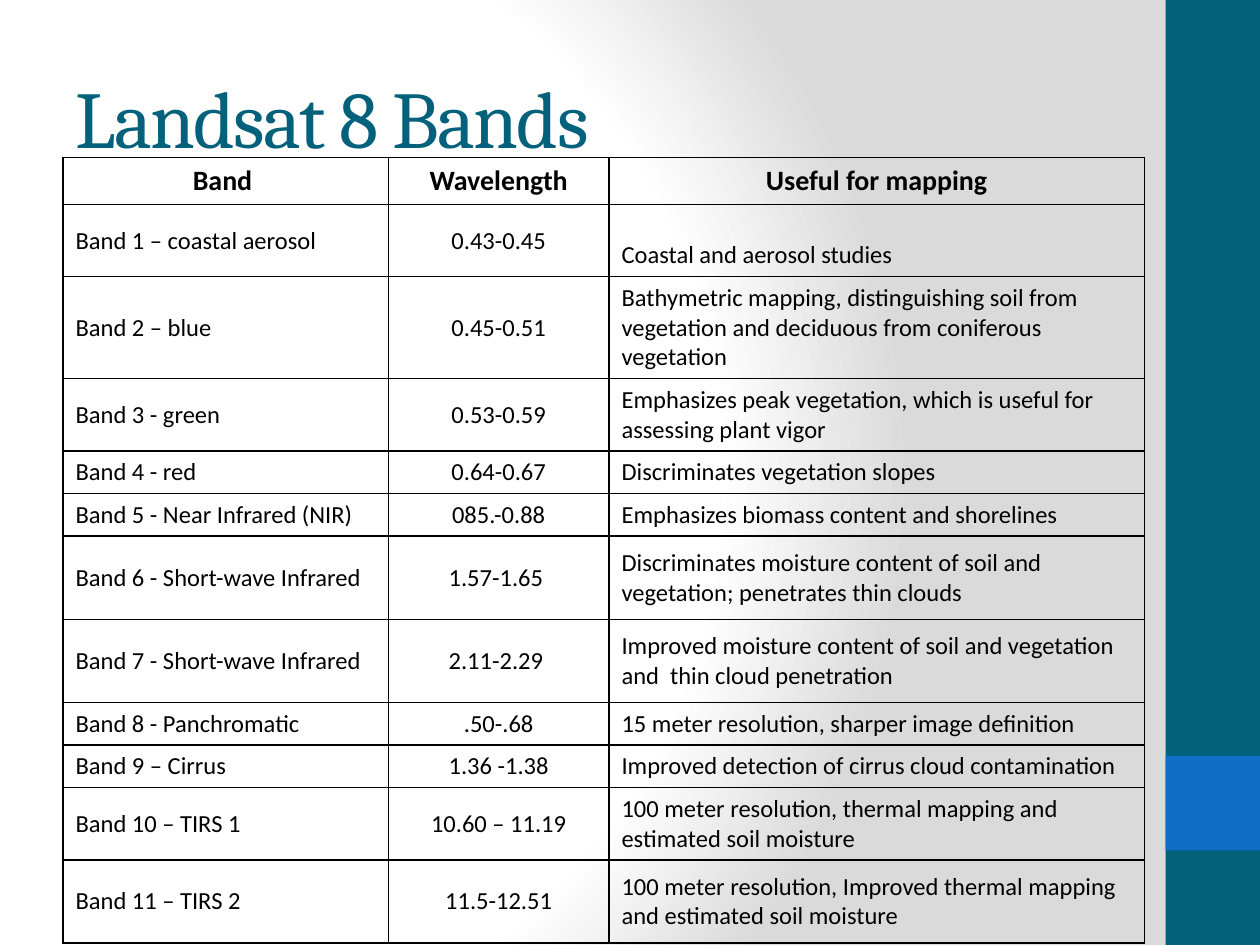
from dataclasses import dataclass

from lxml import etree
from pptx import Presentation
from pptx.dml.color import RGBColor
from pptx.enum.shapes import MSO_SHAPE
from pptx.enum.text import MSO_ANCHOR, PP_ALIGN
from pptx.oxml import parse_xml
from pptx.oxml.ns import nsdecls, qn
from pptx.util import Pt

RECT = MSO_SHAPE.RECTANGLE
MIDDLE = MSO_ANCHOR.MIDDLE
LEFT, CENTER = PP_ALIGN.LEFT, PP_ALIGN.CENTER


@dataclass(frozen=True)
class Theme:
    """Colours, fonts and type sizes."""
    teal: str = "04617B"
    blue: str = "0F6FC6"
    black: str = "000000"
    white: str = "FFFFFF"
    grey: str = "DADADA"
    serif: str = "Cambria"
    sans: str = "Calibri"
    title: int = 46
    head: int = 16
    body: int = 14


THEME = Theme()
HEADS = ("Band ", "Wavelength", "Useful for mapping")
BANDS = (
    (41, "Band 1 – coastal aerosol", "0.43-0.45", "Coastal and aerosol studies"),
    (58.3, "Band 2 – blue", "0.45-0.51",
     "Bathymetric mapping, distinguishing soil from vegetation and "
     "deciduous from coniferous vegetation"),
    (41, "Band 3 - green", "0.53-0.59",
     "Emphasizes peak vegetation, which is useful for assessing plant vigor"),
    (24.4, "Band 4 - red", "0.64-0.67", "Discriminates vegetation slopes"),
    (24.4, "Band 5 - Near Infrared (NIR)", "085.-0.88",
     "Emphasizes biomass content and shorelines"),
    (47.5, "Band 6 - Short-wave Infrared", "1.57-1.65 ",
     "Discriminates moisture content of soil and vegetation; "
     "penetrates thin clouds"),
    (47.5, "Band 7 - Short-wave Infrared", "2.11-2.29 ",
     "Improved moisture content of soil and vegetation and  "
     "thin cloud penetration"),
    (24.4, "Band 8 - Panchromatic", ".50-.68",
     "15 meter resolution, sharper image definition"),
    (24.4, "Band 9 – Cirrus", "1.36 -1.38",
     "Improved detection of cirrus cloud contamination"),
    (41, "Band 10 – TIRS 1", "10.60 – 11.19",
     "100 meter resolution, thermal mapping and estimated soil moisture"),
    (47.5, "Band 11 – TIRS 2", "11.5-12.51",
     "100 meter resolution, Improved thermal mapping and "
     "estimated soil moisture"),
)


def paint(slide):
    """Give the slide its radial white to grey background."""
    slide.background.fill.solid()
    props = slide.element.cSld.find(qn("p:bg")).find(qn("p:bgPr"))
    stops = "".join(
        f'<a:gs pos="{pos}"><a:srgbClr val="{tone}"/></a:gs>'
        for pos, tone in ((0, THEME.white), (75000, THEME.white),
                          (100000, THEME.grey)))
    grad = parse_xml(
        f'<a:gradFill {nsdecls("a")} rotWithShape="1"><a:gsLst>{stops}</a:gsLst>'
        '<a:path path="circle"><a:fillToRect l="20000" t="50000" '
        'r="100000" b="50000"/></a:path></a:gradFill>')
    props.replace(props.find(qn("a:solidFill")), grad)


def add_bar(slide, x, y, w, h):
    """Draw the side bar with its square accent."""
    for top, high, tone in ((y, h, THEME.teal), (y + h * 0.8, w, THEME.blue)):
        bar = slide.shapes.add_shape(RECT, Pt(x), Pt(top), Pt(w), Pt(high))
        bar.shadow.inherit = False
        bar.fill.solid()
        bar.fill.fore_color.rgb = RGBColor.from_string(tone)
        bar.line.fill.background()


def style(para, face, size, tone, bold=False):
    """Set the font of a paragraph."""
    font = para.font
    font.name, font.size, font.bold = face, Pt(size), bold
    font.color.rgb = RGBColor.from_string(tone)


def add_title(slide, x, y, w, h):
    """Fill and place the title."""
    title = slide.shapes.title
    title.left, title.top, title.width, title.height = map(Pt, (x, y, w, h))
    frame = title.text_frame
    frame.text = "Landsat 8 Bands"
    frame.vertical_anchor = MIDDLE
    para = frame.paragraphs[0]
    para.alignment = LEFT
    style(para, THEME.serif, THEME.title, THEME.teal)
    para.runs[0].font._element.set("spc", "-100")


def add_rules(cell):
    """Draw thin lines on all sides of a cell."""
    props = cell._tc.get_or_add_tcPr()
    for spot, side in enumerate(("lnL", "lnR", "lnT", "lnB")):
        line = etree.Element(qn(f"a:{side}"), w=str(Pt(1)))
        fill = etree.SubElement(line, qn("a:solidFill"))
        etree.SubElement(fill, qn("a:srgbClr"), val=THEME.black)
        props.insert(spot, line)


def add_grid(slide, x, y, w, h):
    """Build the table of bands."""
    rows = ((27, *HEADS), *BANDS)
    grid = slide.shapes.add_table(
        len(rows), len(HEADS), Pt(x), Pt(y), Pt(w), Pt(h)).table
    grid.horz_banding = False
    for col, wide in zip(grid.columns, (186, 126, w - 312)):
        col.width = Pt(wide)
    for i, (high, *words) in enumerate(rows):
        grid.rows[i].height = Pt(high)
        head = i == 0
        for j, word in enumerate(words):
            cell = grid.cell(i, j)
            cell.text = word
            cell.vertical_anchor = MIDDLE
            cell.fill.background()
            add_rules(cell)
            para = cell.text_frame.paragraphs[0]
            para.alignment = CENTER if head or j == 1 else LEFT
            style(para, THEME.sans, THEME.head if head else THEME.body,
                  THEME.black, head)
    grid.cell(1, 2).margin_top = Pt(20.4)


def main():
    """Build and save the slide."""
    deck = Presentation()
    deck.slide_width, deck.slide_height = Pt(720), Pt(540)
    slide = deck.slides.add_slide(deck.slide_layouts[5])
    paint(slide)
    add_bar(slide, 666, 0, 54, 540)
    add_title(slide, 36, 21.6, 600, 90)
    add_grid(slide, 36, 90, 618, 448.4)
    deck.save("out.pptx")


if __name__ == "__main__":
    main()
